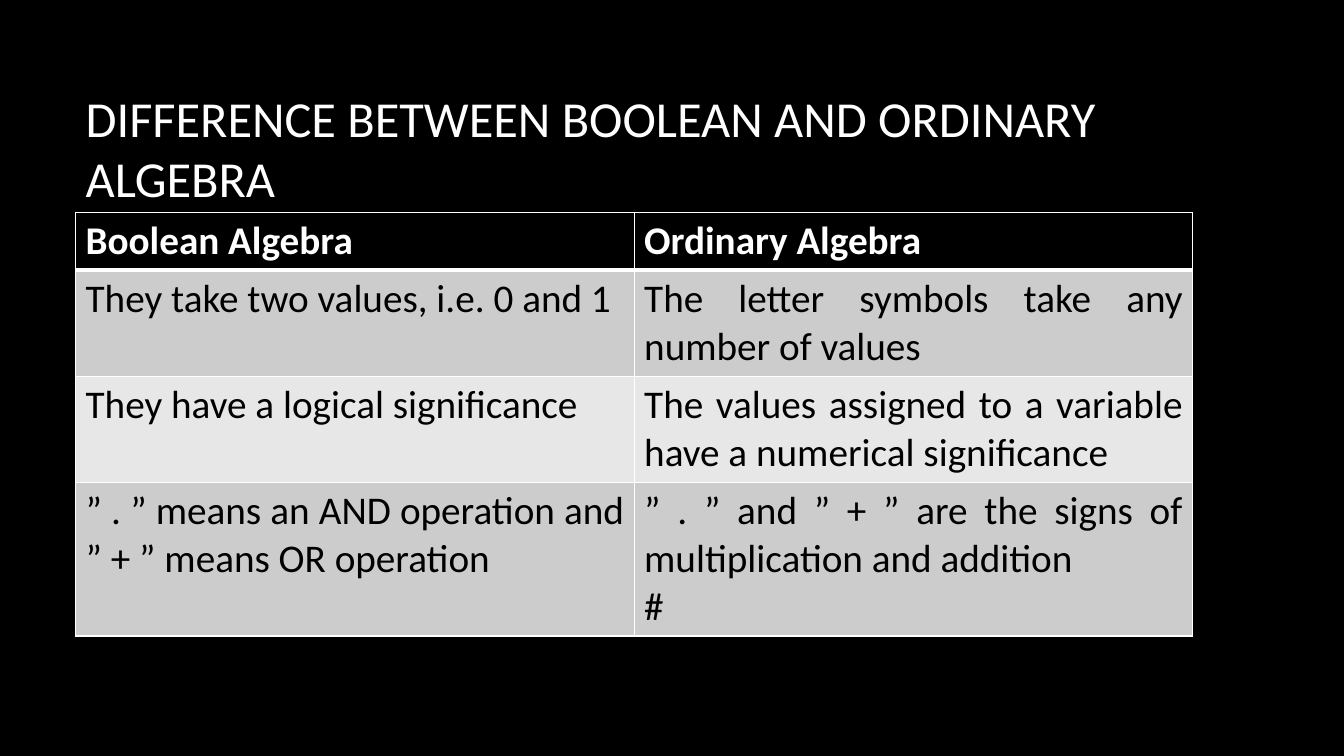
import pptx
import pptx.util
import pptx.dml.color
import pptx.enum.text
import pptx.oxml
import pptx.oxml.ns

BLACK = pptx.dml.color.RGBColor(0x00, 0x00, 0x00)
WHITE = pptx.dml.color.RGBColor(0xFF, 0xFF, 0xFF)
DARK_BAND = pptx.dml.color.RGBColor(0xCC, 0xCC, 0xCC)
LIGHT_BAND = pptx.dml.color.RGBColor(0xE7, 0xE7, 0xE7)

COMPARISON = [
    (["Boolean Algebra"], ["Ordinary Algebra"]),
    (["They take two values, i.e. 0 and 1"],
     ["The letter symbols take any number of values"]),
    (["They have a logical significance"],
     ["The values assigned to a variable have a numerical significance"]),
    (["” . ” means an AND operation and ” + ” means OR operation"],
     ["” . ” and ” + ” are the signs of multiplication and addition", "#"]),
]
ROW_HEIGHTS = [55, 101, 101, 146]


def px(n):
    return pptx.util.Emu(n * 9525)


class Deck:
    font = "Calibri"
    title_size = 36
    cell_size = 28

    def __init__(self, width, height):
        self.prs = pptx.Presentation()
        self.prs.slide_width = px(width)
        self.prs.slide_height = px(height)

    def add_slide(self, background):
        self.s = self.prs.slides.add_slide(self.prs.slide_layouts[5])
        fill = self.s.background.fill
        fill.solid()
        fill.fore_color.rgb = background

    def add_text(self, p, text, size, color, align, bold=False):
        p.alignment = align
        r = p.add_run()
        r.text = text
        r.font.name = self.font
        r.font.size = pptx.util.Pt(size)
        r.font.bold = bold
        r.font.color.rgb = color

    def title(self, text, left, top, width, height):
        sp = self.s.shapes.title
        sp.left, sp.top, sp.width, sp.height = map(px, (left, top, width, height))
        tf = sp.text_frame
        tf.word_wrap = True
        tf.auto_size = pptx.enum.text.MSO_AUTO_SIZE.NONE
        tf.vertical_anchor = pptx.enum.text.MSO_ANCHOR.MIDDLE
        self.add_text(tf.paragraphs[0], text, self.title_size, WHITE,
                      pptx.enum.text.PP_ALIGN.LEFT)

    def border(self, side, points):
        ns = pptx.oxml.ns.nsdecls("a")
        return pptx.oxml.parse_xml(
            f'<a:{side} {ns} w="{pptx.util.Pt(points)}"><a:solidFill>'
            f'<a:srgbClr val="{WHITE}"/></a:solidFill></a:{side}>')

    def cell(self, cell, lines, fill, color, bold, top, bottom):
        cell.fill.solid()
        cell.fill.fore_color.rgb = fill
        widths = {"lnL": 1, "lnR": 1, "lnT": top, "lnB": bottom}
        tc_pr = cell._tc.get_or_add_tcPr()
        for i, (side, points) in enumerate(widths.items()):
            tc_pr.insert(i, self.border(side, points))
        tf = cell.text_frame
        for i, text in enumerate(lines):
            p = tf.add_paragraph() if i else tf.paragraphs[0]
            self.add_text(p, text, self.cell_size, color,
                          pptx.enum.text.PP_ALIGN.JUSTIFY, bold)

    def table(self, rows, heights, left, top, width):
        columns = len(rows[0])
        frame = self.s.shapes.add_table(len(rows), columns, px(left), px(top),
                                        px(width), px(sum(heights)))
        table = frame.table
        for column in table.columns:
            column.width = px(width // columns)
        for i, (row, height) in enumerate(zip(rows, heights)):
            table.rows[i].height = px(height)
            header = i == 0
            fill = BLACK if header else DARK_BAND if i % 2 else LIGHT_BAND
            for j, lines in enumerate(row):
                self.cell(table.cell(i, j), lines, fill,
                          WHITE if header else BLACK, header,
                          3 if i == 1 else 1, 3 if header else 1)


def main():
    deck = Deck(1280, 720)
    deck.add_slide(BLACK)
    deck.title("DIFFERENCE BETWEEN BOOLEAN AND ORDINARY ALGEBRA",
               72, 64, 1064, 153)
    deck.table(COMPARISON, ROW_HEIGHTS, 72, 202, 1064)
    deck.prs.save("out.pptx")


if __name__ == "__main__":
    main()
